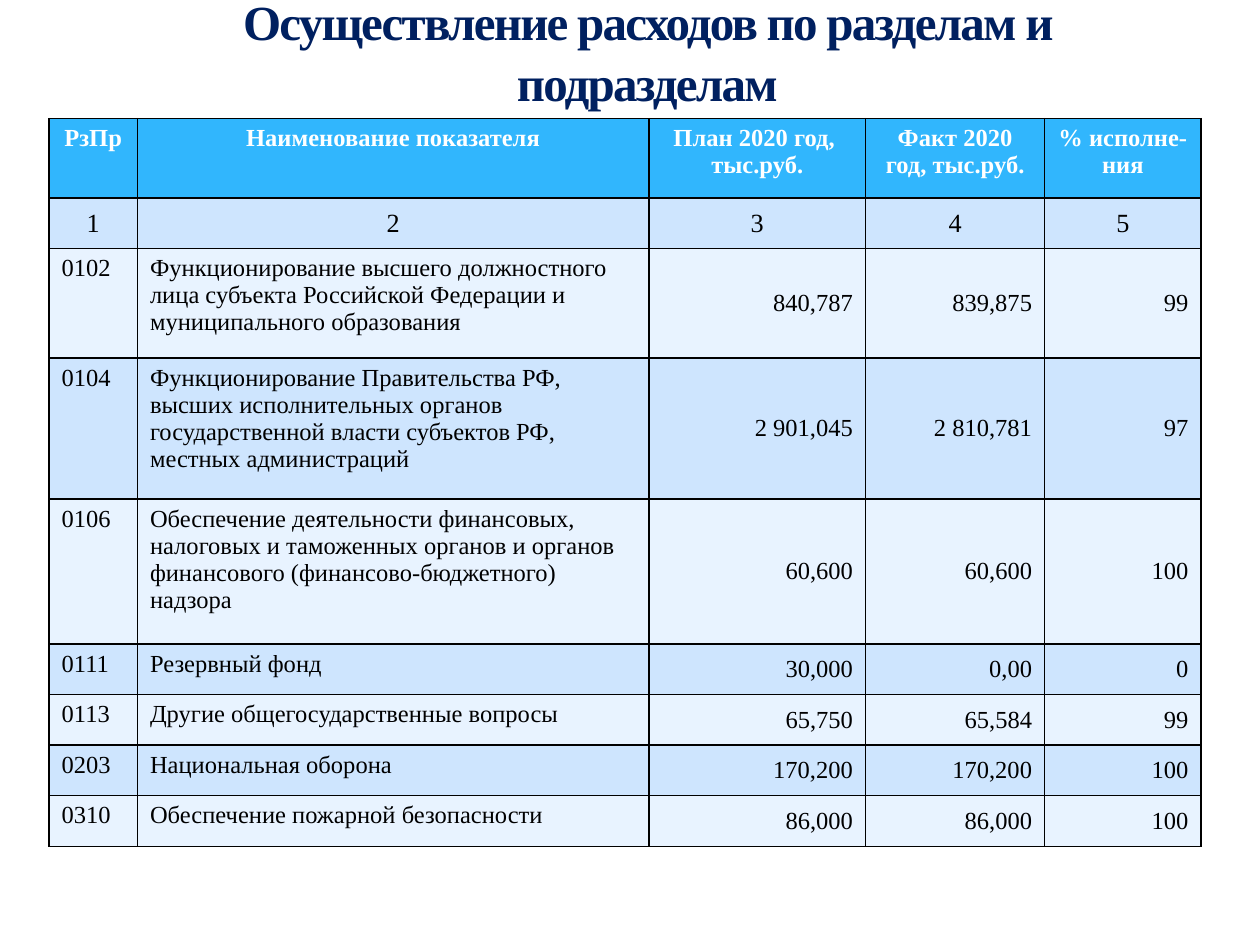
import pptx
import pptx.util
import pptx.dml.color
import pptx.enum.text
import pptx.oxml.ns
import lxml.etree

Cm = pptx.util.Cm
Pt = pptx.util.Pt
ALIGN = pptx.enum.text.PP_ALIGN
ANCHOR = pptx.enum.text.MSO_ANCHOR
qn = pptx.oxml.ns.qn

COLOURS = {
    "title": "002060",
    "header": "31B6FD",
    "header_text": "FFFFFF",
    "band_dark": "CEE5FE",
    "band_light": "E8F3FF",
    "text": "000000",
    "border": "000000",
}

HEADERS = [
    "РзПр",
    "Наименование показателя",
    "План 2020 год, \nтыс.руб.",
    "Факт 2020 год, тыс.руб.",
    "% исполне-ния",
]
EXPENSES = [
    ["0102", "Функционирование высшего должностного лица субъекта Российской Федерации "
             "и муниципального образования", "840,787", "839,875", "99"],
    ["0104", "Функционирование Правительства РФ, высших исполнительных органов "
             "государственной власти субъектов РФ, местных администраций",
     "2 901,045", "2 810,781", "97"],
    ["0106", "Обеспечение деятельности финансовых, налоговых и таможенных органов и органов "
             "финансового (финансово-бюджетного) надзора", "60,600", "60,600", "100"],
    ["0111", "Резервный фонд", "30,000", "0,00", "0"],
    ["0113", "Другие общегосударственные вопросы", "65,750", "65,584", "99"],
    ["0203", "Национальная оборона", "170,200", "170,200", "100"],
    ["0310", "Обеспечение пожарной безопасности", "86,000", "86,000", "100"],
]
COLUMN_WIDTHS = [1.78, 10.31, 4.37, 3.61, 3.15]
ROW_HEIGHTS = [1.6, 1.02, 2.21, 2.84, 2.92] + [1.02] * 4


class SlideBuilder:
    """Holds the style and the current slide, and adds elements to it."""

    def __init__(self, page, font="Times New Roman"):
        self.page = page
        self.font = font

    def add_text(self, frame, text, size, colour, bold=False, align=ALIGN.LEFT):
        for index, line in enumerate(text.split("\n")):
            para = frame.add_paragraph() if index else frame.paragraphs[0]
            para.alignment = align
            span = para.add_run()
            span.text = line
            span.font.name = self.font
            span.font.size = Pt(size)
            span.font.bold = bold
            span.font.color.rgb = pptx.dml.color.RGBColor.from_string(COLOURS[colour])

    def title(self, text, left, top, width, height):
        box = self.page.shapes.add_textbox(Cm(left), Cm(top), Cm(width), Cm(height))
        frame = box.text_frame
        frame.word_wrap = True
        frame.vertical_anchor = ANCHOR.BOTTOM
        self.add_text(frame, text, 28, "title", True, ALIGN.CENTER)
        para = frame.paragraphs[0]
        para.line_spacing = 1.05
        para.runs[0]._r.get_or_add_rPr().set("spc", "-100")

    def border(self, cell):
        properties = cell._tc.get_or_add_tcPr()
        for position, side in enumerate(("lnL", "lnR", "lnT", "lnB")):
            line = lxml.etree.Element(qn(f"a:{side}"), w=str(Pt(1)))
            fill = lxml.etree.SubElement(line, qn("a:solidFill"))
            lxml.etree.SubElement(fill, qn("a:srgbClr"), val=COLOURS["border"])
            properties.insert(position, line)

    def cell(self, cell, text, fill, size, colour, bold, align, anchor):
        cell.fill.solid()
        cell.fill.fore_color.rgb = pptx.dml.color.RGBColor.from_string(COLOURS[fill])
        cell.vertical_anchor = anchor
        self.border(cell)
        self.add_text(cell.text_frame, text, size, colour, bold, align)

    def table(self, left, top):
        numbers = [str(number) for number in range(1, len(HEADERS) + 1)]
        rows = [HEADERS, numbers] + EXPENSES
        table = self.page.shapes.add_table(
            len(rows), len(HEADERS), Cm(left), Cm(top),
            Cm(sum(COLUMN_WIDTHS)), Cm(sum(ROW_HEIGHTS))).table
        for column, width in zip(table.columns, COLUMN_WIDTHS):
            column.width = Cm(width)
        for r, (values, height) in enumerate(zip(rows, ROW_HEIGHTS)):
            table.rows[r].height = Cm(height)
            band = "band_dark" if r % 2 else "band_light"
            for c, value in enumerate(values):
                if r == 0:
                    style = ("header", 14, "header_text", True, ALIGN.CENTER, ANCHOR.TOP)
                elif r == 1:
                    style = (band, 15, "text", False, ALIGN.CENTER, ANCHOR.MIDDLE)
                elif c < 2:
                    style = (band, 14, "text", False, ALIGN.LEFT, ANCHOR.TOP)
                else:
                    style = (band, 14, "text", False, ALIGN.RIGHT, ANCHOR.MIDDLE)
                self.cell(table.cell(r, c), value, *style)


def main():
    deck = pptx.Presentation()
    deck.slide_width = Cm(25.4)
    deck.slide_height = Cm(19.05)
    builder = SlideBuilder(deck.slides.add_slide(deck.slide_layouts[6]))
    builder.table(0.99, 2.39)
    builder.title("Осуществление расходов по разделам и подразделам", 3.3, 0.4, 19.5, 1.98)
    deck.save("out.pptx")


if __name__ == "__main__":
    main()
